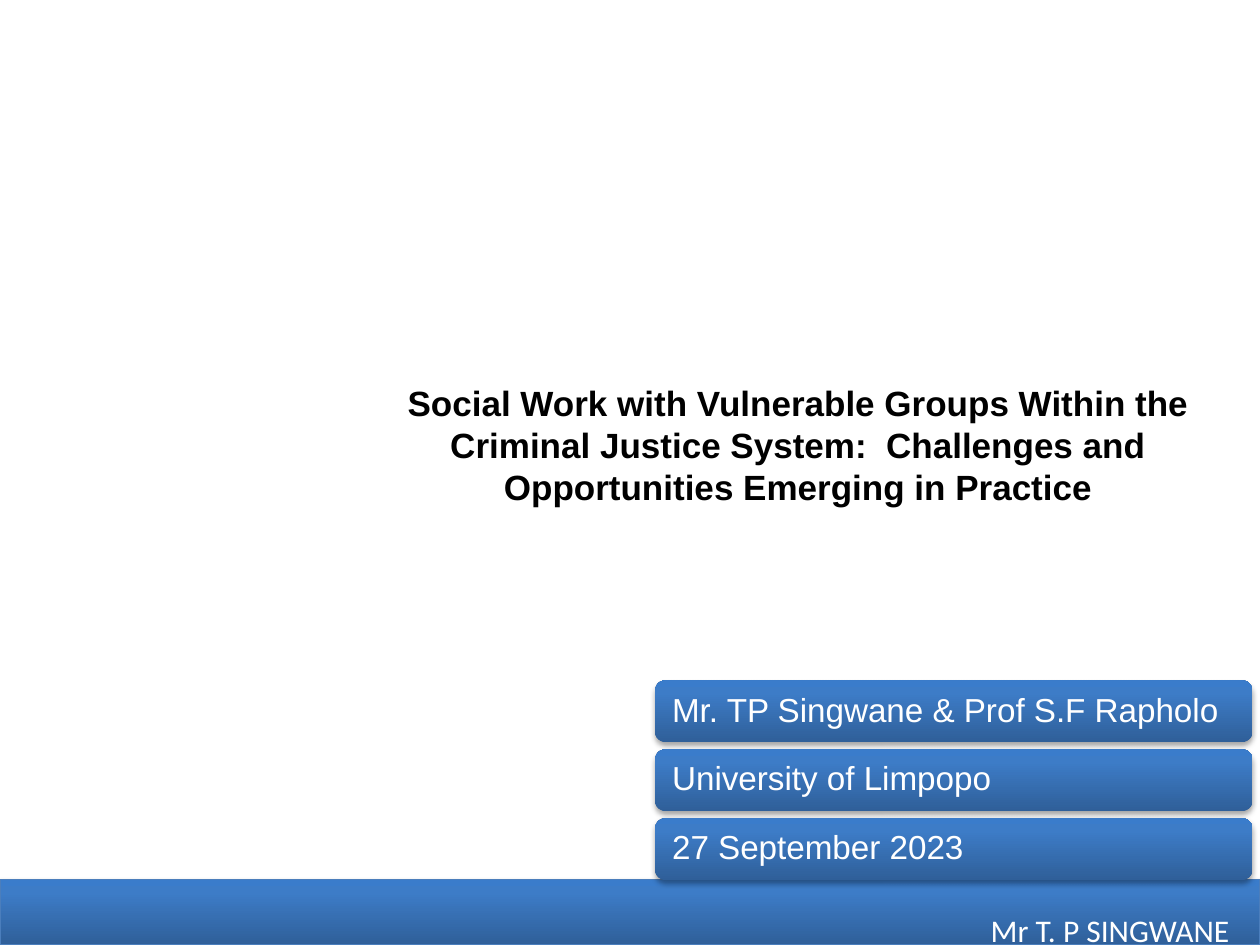
from lxml import etree
from pptx import Presentation
from pptx.dml.color import RGBColor
from pptx.enum.shapes import MSO_SHAPE as SHAPE
from pptx.enum.text import MSO_ANCHOR as ANCHOR, PP_ALIGN as ALIGN
from pptx.oxml.ns import qn
from pptx.util import Pt

GRADIENT = [(0, "2F5F99"), (80, "3D7CC7"), (100, "3A7CCB")]


def color(hex_text):
    return RGBColor.from_string(hex_text)


def write(tf, text, font="Arial", size=19, rgb="FFFFFF", bold=False,
          align=ALIGN.LEFT, spacing=1.0):
    tf.word_wrap = True
    tf.vertical_anchor = ANCHOR.MIDDLE
    p = tf.paragraphs[0]
    p.alignment = align
    p.line_spacing = spacing
    r = p.add_run()
    r.text = text
    r.font.name = font
    r.font.size = Pt(size)
    r.font.bold = bold
    r.font.color.rgb = color(rgb)


def add_color(parent, rgb):
    return etree.SubElement(parent, qn("a:srgbClr"), val=rgb)


class Deck:
    def __init__(self, width, height):
        self.prs = Presentation()
        self.prs.slide_width, self.prs.slide_height = Pt(width), Pt(height)
        self.s = self.prs.slides.add_slide(self.prs.slide_layouts[6])

    def bar(self, kind, x, y, w, h, line=None):
        """Add a blue gradient shape with a soft shadow below it."""
        sp = self.s.shapes.add_shape(kind, Pt(x), Pt(y), Pt(w), Pt(h))
        sp.fill.gradient()
        sp.fill.gradient_angle = 90
        stops = sp.element.spPr.find(".//" + qn("a:gsLst"))
        for stop in list(stops):
            stops.remove(stop)
        for pos, rgb in GRADIENT:
            add_color(etree.SubElement(stops, qn("a:gs"), pos=str(pos * 1000)), rgb)
        if line:
            sp.line.color.rgb = color(line)
            sp.line.width = Pt(0.75)
        else:
            sp.line.fill.background()
        sp.shadow.inherit = False
        shadow = etree.SubElement(
            sp.element.spPr.find(qn("a:effectLst")), qn("a:outerShdw"),
            blurRad=str(Pt(3.1)), dist=str(Pt(1.8)), dir="5400000", rotWithShape="0")
        etree.SubElement(add_color(shadow, "000000"), qn("a:alpha"), val="35000")
        return sp

    def label_bar(self, text, x, y, w, h):
        tf = self.bar(SHAPE.ROUNDED_RECTANGLE, x, y, w, h).text_frame
        tf.margin_left = tf.margin_right = Pt(8)
        tf.margin_top = tf.margin_bottom = Pt(6)
        write(tf, text, spacing=0.9)

    def text(self, text, x, y, w, h, **style):
        box = self.s.shapes.add_textbox(Pt(x), Pt(y), Pt(w), Pt(h))
        write(box.text_frame, text, **style)


def main():
    deck = Deck(720, 540)

    # Footer band
    deck.bar(SHAPE.RECTANGLE, 0, 502.5, 720, 37.5, line="4B7EBC")

    # Title
    deck.text("Social Work with Vulnerable Groups Within the Criminal Justice "
              "System:  Challenges and Opportunities Emerging in Practice",
              212.4, 213.8, 487.4, 80, size=20, rgb="000000", bold=True,
              align=ALIGN.CENTER)

    # Presenters, university and date
    details = ["Mr. TP Singwane & Prof S.F Rapholo", "University of Limpopo",
               "27 September 2023"]
    for i, detail in enumerate(details):
        deck.label_bar(detail, 374.4, 388.8 + i * 39.4, 341.3, 35.3)

    # Footer name
    deck.text("Mr T. P SINGWANE", 553, 517, 162.7, 29, font="Calibri", size=18,
              align=ALIGN.CENTER)

    deck.prs.save("out.pptx")


if __name__ == "__main__":
    main()
